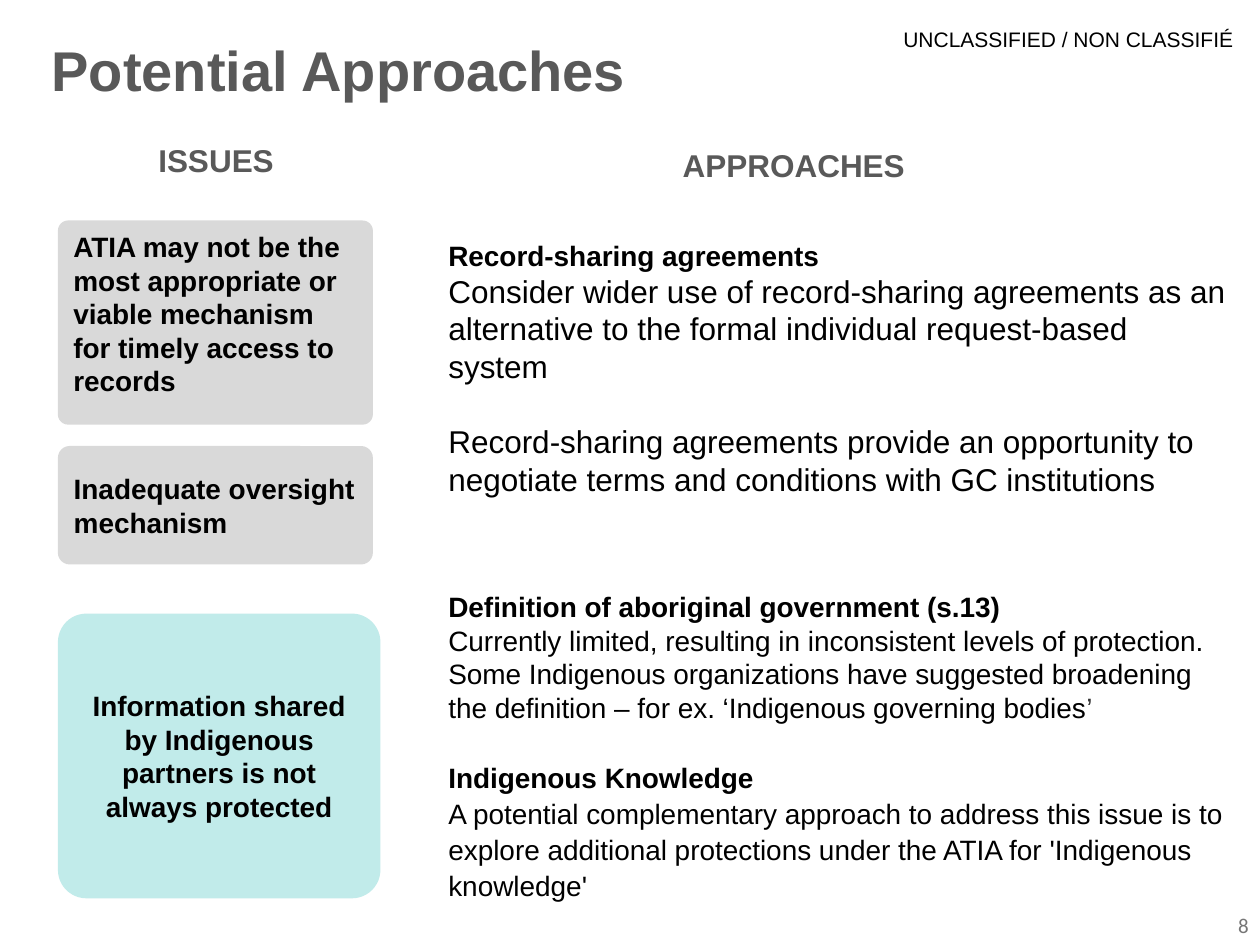
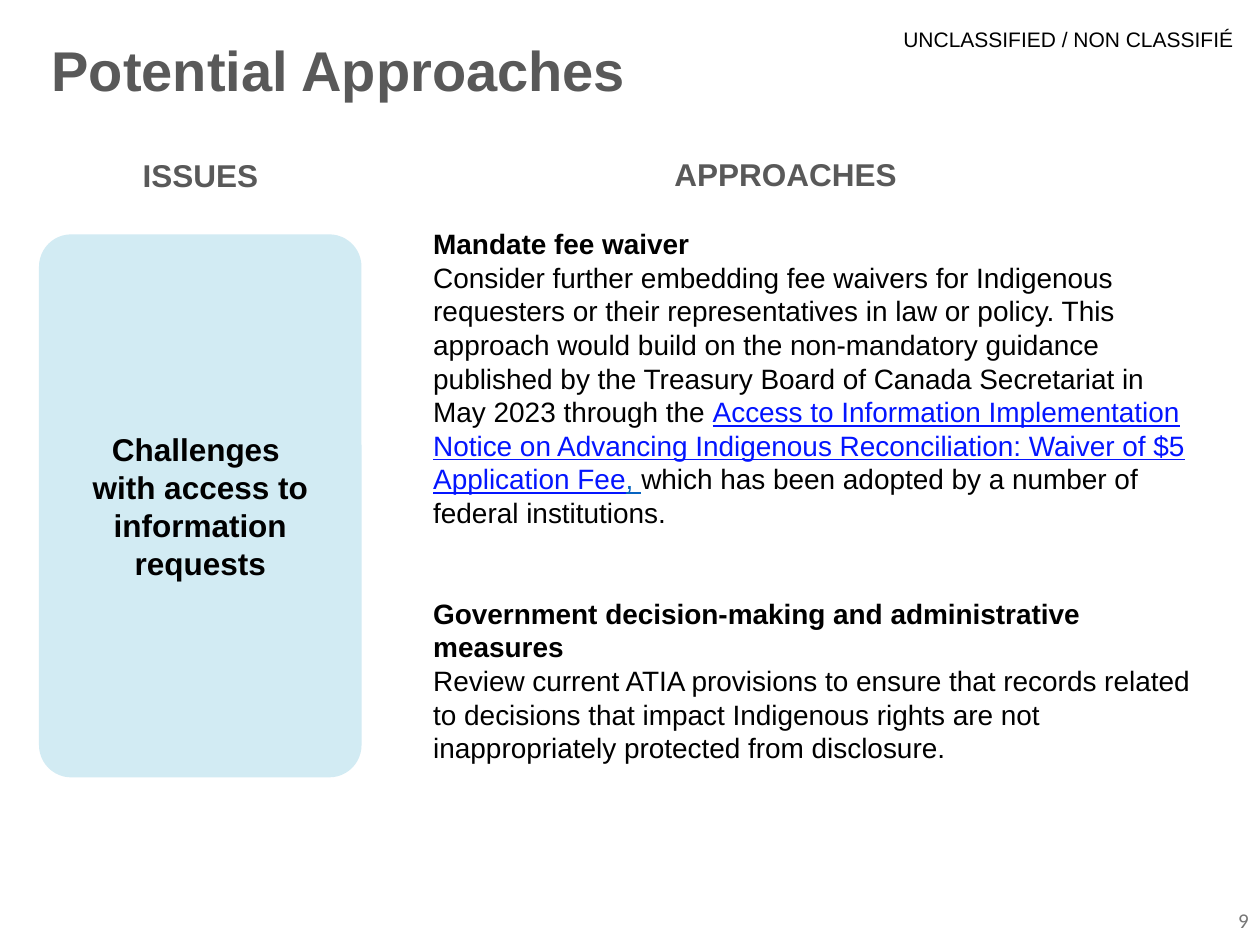
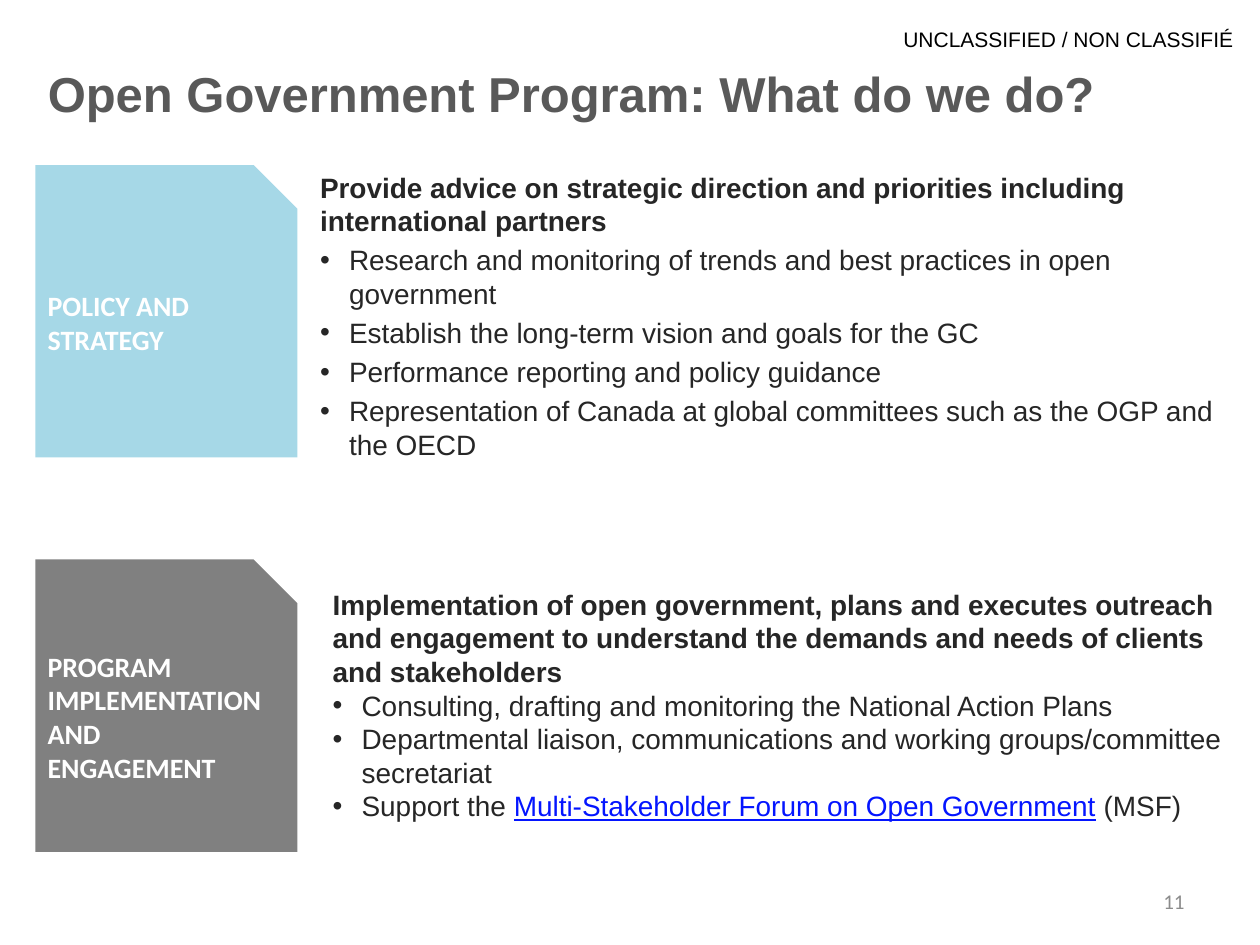
"""Build three slides on access to information approaches and the open government program."""
from lxml import etree
from pptx import Presentation
from pptx.dml.color import RGBColor
from pptx.enum.shapes import MSO_SHAPE
from pptx.enum.text import MSO_ANCHOR, MSO_AUTO_SIZE, PP_ALIGN
from pptx.oxml.ns import qn
from pptx.util import Inches, Pt

ROUNDED, SNIPPED = MSO_SHAPE.ROUNDED_RECTANGLE, MSO_SHAPE.SNIP_1_RECTANGLE
TOP, MIDDLE = MSO_ANCHOR.TOP, MSO_ANCHOR.MIDDLE
LEFT, CENTER, RIGHT = PP_ALIGN.LEFT, PP_ALIGN.CENTER, PP_ALIGN.RIGHT
NO_AUTOFIT = MSO_AUTO_SIZE.NONE

BLACK = RGBColor(0x00, 0x00, 0x00)
WHITE = RGBColor(0xFF, 0xFF, 0xFF)
HEADING_GRAY = RGBColor(0x59, 0x59, 0x59)
BODY_GRAY = RGBColor(0x26, 0x26, 0x26)
QUOTE_GRAY = RGBColor(0x33, 0x33, 0x33)
NUMBER_GRAY = RGBColor(0x76, 0x76, 0x76)
PALE_NUMBER_GRAY = RGBColor(0x8C, 0x8C, 0x8C)
LINK_BLUE = RGBColor(0x04, 0x15, 0xFF)
COMMA_BLUE = RGBColor(0x05, 0x63, 0xC1)
ISSUE_GRAY = RGBColor(0xD9, 0xD9, 0xD9)
ISSUE_TEAL = RGBColor(0xC1, 0xEB, 0xEA)
ISSUE_BLUE = RGBColor(0xD2, 0xEB, 0xF3)
POLICY_BLUE = RGBColor(0xA6, 0xD8, 0xE7)
PROGRAM_GRAY = RGBColor(0x80, 0x80, 0x80)


def write(shape, paragraphs, size, color, bold=False, font="Arial", align=LEFT, anchor=MIDDLE):
    """Fill a shape with paragraphs given as text or as dicts of runs and options."""
    frame = shape.text_frame
    frame.word_wrap = True
    frame.auto_size = NO_AUTOFIT
    frame.vertical_anchor = anchor
    for index, entry in enumerate(paragraphs):
        options = entry if isinstance(entry, dict) else {"runs": [entry]}
        paragraph = frame.add_paragraph() if index else frame.paragraphs[0]
        properties = paragraph._p.get_or_add_pPr()
        if options.get("bullet"):
            properties.set("marL", str(Inches(0.23)))
            properties.set("indent", str(-Inches(0.23)))
            etree.SubElement(properties, qn("a:buFont")).set("typeface", "Arial")
            etree.SubElement(properties, qn("a:buChar")).set("char", "•")
        else:
            properties.set("marL", "0")
            properties.set("indent", "0")
            etree.SubElement(properties, qn("a:buNone"))
        paragraph.alignment = align
        paragraph.space_before = Pt(options.get("before", 0))
        paragraph.line_spacing = options.get("spacing", 1.0)
        for piece in options["runs"]:
            text, run_color, underline = (piece, color, False) if isinstance(piece, str) else piece
            run = paragraph.add_run()
            run.text = text
            run.font.name = font
            run.font.size = Pt(options.get("size", size))
            run.font.bold = options.get("bold", bold)
            run.font.color.rgb = run_color
            if underline:
                run.font.underline = True


def add_panel(slide, box, fill=None, outline=None, corner=None):
    """Add a text box, or a filled preset shape without line and shadow."""
    lengths = [Inches(length) for length in box]
    if outline is None:
        panel = slide.shapes.add_textbox(*lengths)
    else:
        panel = slide.shapes.add_shape(outline, *lengths)
        panel.shadow.inherit = False
        panel.line.fill.background()
    if fill is not None:
        panel.fill.solid()
        panel.fill.fore_color.rgb = fill
    if corner is not None:
        panel.adjustments[0] = corner
    return panel


prs = Presentation()
prs.slide_width, prs.slide_height = Inches(10), Inches(7.5)
title_only, two_lists = prs.slide_layouts[5], prs.slide_layouts[3]
protection, fees, program = [
    prs.slides.add_slide(layout) for layout in (title_only, title_only, two_lists)
]

classification = add_panel(protection, (7.17, 0.21, 2.67, 0.2))
write(classification, ["UNCLASSIFIED / NON CLASSIFIÉ"], 12, BLACK, anchor=TOP)
classification.text_frame.margin_left = classification.text_frame.margin_right = 0
classification.text_frame.margin_top = classification.text_frame.margin_bottom = 0
classification.element.nvSpPr.cNvPr.set("id", "20")
prs.slide_master.shapes.element.append(classification.element)

for slide, title_text, title_size, title_box, number, number_box, number_color, number_fill in [
    (protection, "Potential Approaches", 32, (0.31, 0.18, 8.39, 0.74),
     "8", (8.65, 7.14, 1.36, 0.4), NUMBER_GRAY, WHITE),
    (fees, "Potential Approaches", 32, (0.31, 0.18, 8.39, 0.74),
     "9", (8.65, 7.1, 1.36, 0.4), NUMBER_GRAY, WHITE),
    (program, "Open Government Program: What do we do?", 28, (0.28, 0.24, 10.39, 1.45),
     "11", (7.17, 6.95, 2.33, 0.4), PALE_NUMBER_GRAY, None),
]:
    title = slide.shapes.title
    title.left, title.top, title.width, title.height = [Inches(length) for length in title_box]
    write(title, [title_text], title_size, HEADING_GRAY, bold=True)
    page_number = add_panel(slide, number_box, number_fill)
    write(page_number, [number], 12, number_color, font="Calibri", align=RIGHT)
program.shapes.title.text_frame.margin_bottom = Inches(0.5)

for slide, heading, box in [
    (protection, "ISSUES", (-0.17, 0.9, 3.77, 0.74)),
    (protection, "APPROACHES", (2.96, 0.94, 6.68, 0.74)),
    (fees, "ISSUES", (0.24, 1.02, 2.7, 0.74)),
    (fees, "APPROACHES", (3.04, 1.01, 6.39, 0.74)),
]:
    write(add_panel(slide, box), [heading], 18, HEADING_GRAY, bold=True, align=CENTER)

for slide, issue, size, box, fill, corner, align, anchor in [
    (protection, ["ATIA may not be the most appropriate or viable mechanism for timely access to records"],
     16, (0.46, 1.75, 2.5, 1.62), ISSUE_GRAY, 0.05, LEFT, TOP),
    (protection, ["Inadequate oversight mechanism"],
     16, (0.46, 3.54, 2.5, 0.94), ISSUE_GRAY, 0.1, LEFT, MIDDLE),
    (protection, ["Information shared by Indigenous partners is not always protected"],
     16, (0.46, 4.87, 2.56, 2.26), ISSUE_TEAL, 0.1, CENTER, MIDDLE),
    (fees, ["Challenges ", "with access to information requests"],
     18, (0.31, 1.86, 2.56, 4.31), ISSUE_BLUE, 0.1, CENTER, MIDDLE),
]:
    issue_panel = add_panel(slide, box, fill, ROUNDED, corner)
    write(issue_panel, issue, size, BLACK, bold=True, align=align, anchor=anchor)

for slide, box, approach in [
    (protection, (3.46, 1.84, 6.43, 2.19), [
        {"runs": ["Record-sharing agreements"], "bold": True},
        {"runs": ["Consider wider use of record-sharing agreements as an alternative to the "
                  "formal individual request-based system"], "size": 18},
        {"runs": ["Record-sharing agreements provide an opportunity to negotiate terms and "
                  "conditions with GC institutions"], "size": 18, "before": 21},
    ]),
    (protection, (3.46, 4.63, 6.43, 2.8), [
        {"runs": ["Definition of aboriginal government (s.13)"], "bold": True},
        {"runs": ["Currently limited, resulting in inconsistent levels of protection. Some "
                  "Indigenous organizations have suggested broadening the definition – for ex. "
                  "‘Indigenous governing bodies", ("’", QUOTE_GRAY, False)]},
        {"runs": ["Indigenous Knowledge"], "bold": True, "before": 19.5, "spacing": 1.07},
        {"runs": ["A potential complementary approach to address this issue is to explore "
                  "additional protections under the ATIA for 'Indigenous knowledge'"],
         "spacing": 1.07},
    ]),
    (fees, (3.34, 1.75, 6.3, 4.88), [
        {"runs": ["Mandate fee waiver"], "bold": True},
        {"runs": ["Consider further embedding fee waivers for Indigenous requesters or their "
                  "representatives in law or policy. This approach would build on the "
                  "non-mandatory guidance published by the Treasury Board of Canada Secretariat "
                  "in May 2023 through the ",
                  ("Access to Information Implementation Notice on Advancing Indigenous "
                   "Reconciliation: Waiver of $5 Application Fee", LINK_BLUE, True),
                  (", ", COMMA_BLUE, True),
                  "which has been adopted by a number of federal institutions."]},
        {"runs": ["Government decision-making and administrative measures"],
         "bold": True, "before": 38.5},
        "Review current ATIA provisions to ensure that records related to decisions that impact "
        "Indigenous rights are not inappropriately protected from disclosure.",
    ]),
]:
    write(add_panel(slide, box), approach, 16, BLACK, anchor=TOP)

for area, area_top, area_fill, list_index, list_box, inset, gap, summary, activities in [
    ("POLICY AND STRATEGY", 1.31, POLICY_BLUE, 1, (2.54, 1.71, 7.36, 1.59), (0, 0), 3.2,
     "Provide advice on strategic direction and priorities including international partners",
     [["Research and monitoring of trends and best practices in open government"],
      ["Establish the long-term vision and goals for the GC"],
      ["Performance reporting and policy guidance"],
      ["Representation of Canada at global committees such as the OGP and the OECD"]]),
    ("PROGRAM IMPLEMENTATION AND ENGAGEMENT", 4.44, PROGRAM_GRAY, 2, (2.54, 4.97, 7.29, 1.25),
     (0.1, 0.05), 0,
     "Implementation of open government, plans and executes outreach and engagement to "
     "understand the demands and needs of clients and stakeholders",
     [["Consulting, drafting and monitoring the National Action Plans"],
      ["Departmental liaison, communications and working groups/committee secretariat"],
      ["Support the ", ("Multi-Stakeholder Forum on Open Government", LINK_BLUE, True), " (MSF)"]]),
]:
    area_panel = add_panel(program, (0.28, area_top, 2.08, 2.32), area_fill, SNIPPED)
    write(area_panel, [area], 16, WHITE, bold=True, font="Calibri")
    duties = program.placeholders[list_index]
    duties.left, duties.top, duties.width, duties.height = [Inches(length) for length in list_box]
    frame = duties.text_frame
    frame.margin_left = frame.margin_right = Inches(inset[0])
    frame.margin_top = frame.margin_bottom = Inches(inset[1])
    bullets = [{"runs": runs, "bullet": True, "before": gap} for runs in activities]
    write(duties, [{"runs": [summary], "bold": True}] + bullets, 16, BODY_GRAY)

prs.save("out.pptx")
